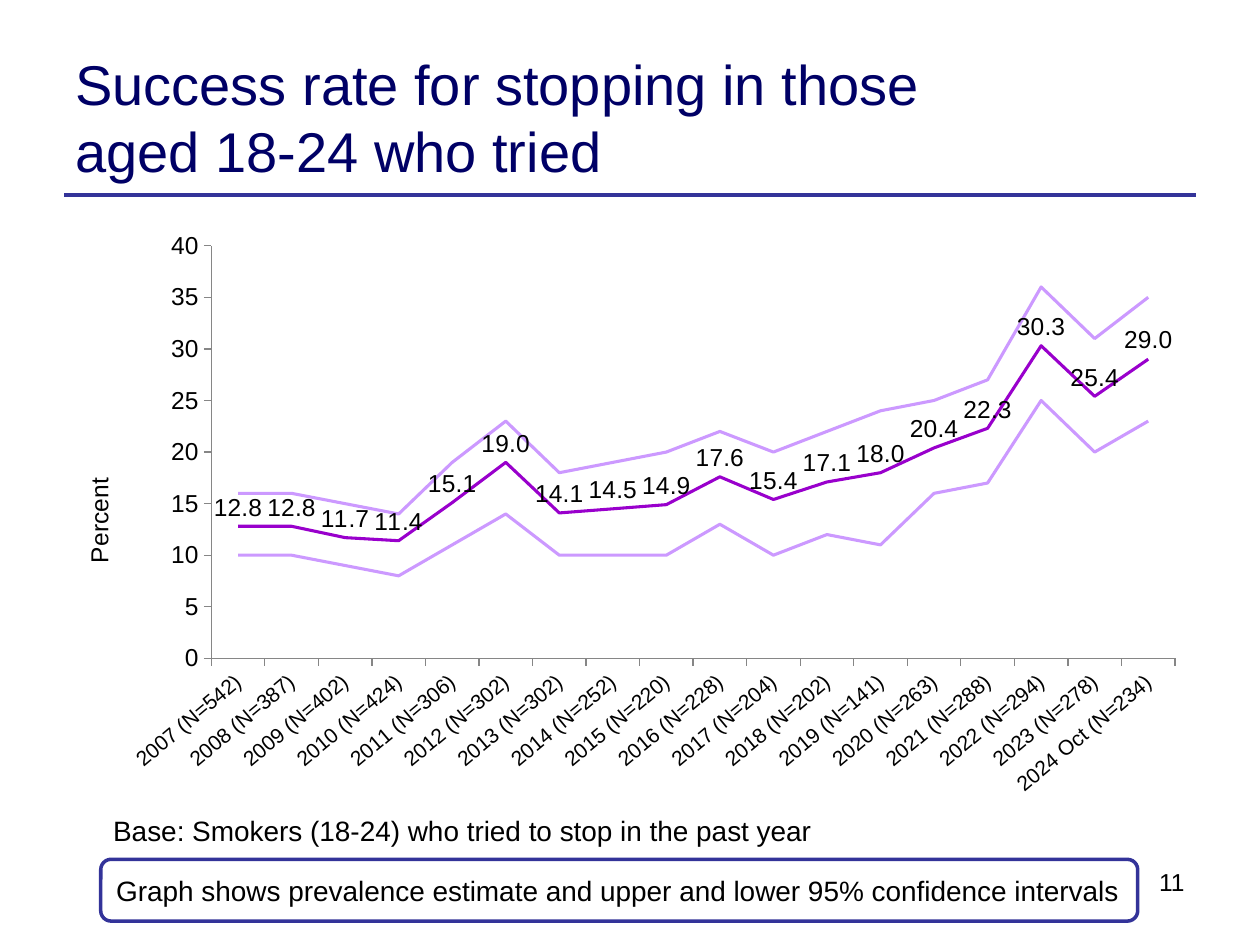
from lxml import etree
from pptx import Presentation
from pptx.chart.data import CategoryChartData
from pptx.dml.color import RGBColor
from pptx.enum.chart import XL_CHART_TYPE, XL_LABEL_POSITION, XL_MARKER_STYLE, XL_TICK_MARK
from pptx.enum.shapes import MSO_CONNECTOR, MSO_SHAPE
from pptx.enum.text import MSO_ANCHOR, PP_ALIGN
from pptx.oxml.ns import qn
from pptx.util import Inches, Pt

LINE_CHART = XL_CHART_TYPE.LINE
ABOVE = XL_LABEL_POSITION.ABOVE
NO_MARKER = XL_MARKER_STYLE.NONE
TICK_OUT, TICK_NONE = XL_TICK_MARK.OUTSIDE, XL_TICK_MARK.NONE
STRAIGHT = MSO_CONNECTOR.STRAIGHT
ROUNDED = MSO_SHAPE.ROUNDED_RECTANGLE
TOP, MIDDLE = MSO_ANCHOR.TOP, MSO_ANCHOR.MIDDLE
LEFT, RIGHT = PP_ALIGN.LEFT, PP_ALIGN.RIGHT

SURVEYS = [
    ("2007 (N=542)", 12.8, 16, 10), ("2008 (N=387)", 12.8, 16, 10),
    ("2009 (N=402)", 11.7, 15, 9), ("2010 (N=424)", 11.4, 14, 8),
    ("2011 (N=306)", 15.1, 19, 11), ("2012 (N=302)", 19, 23, 14),
    ("2013 (N=302)", 14.1, 18, 10), ("2014 (N=252)", 14.5, 19, 10),
    ("2015 (N=220)", 14.9, 20, 10), ("2016 (N=228)", 17.6, 22, 13),
    ("2017 (N=204)", 15.4, 20, 10), ("2018 (N=202)", 17.1, 22, 12),
    ("2019 (N=141)", 18, 24, 11), ("2020 (N=263)", 20.4, 25, 16),
    ("2021 (N=288)", 22.3, 27, 17), ("2022 (N=294)", 30.3, 36, 25),
    ("2023 (N=278)", 25.4, 31, 20), ("2024 Oct (N=234)", 29, 35, 23),
]


def colour(hex_code):
    return RGBColor.from_string(hex_code)


def place(parent, index, **settings):
    for old in parent.findall(qn("c:layout")):
        parent.remove(old)
    layout = etree.Element(qn("c:layout"))
    manual = etree.SubElement(layout, qn("c:manualLayout"))
    for name, value in settings.items():
        etree.SubElement(manual, qn(f"c:{name}")).set("val", str(value))
    parent.insert(index, layout)


class SlideBuilder:
    """Draws styled elements on the current slide."""

    font = "Arial"
    ink, navy, accent, axis_grey = "000000", "000066", "333399", "868686"
    estimate, interval = "9900CC", "CC99FF"

    def __init__(self, slide):
        self.slide = slide

    def style(self, font, size, hex_code):
        font.name, font.size, font.bold = self.font, Pt(size), False
        font.color.rgb = colour(hex_code)

    def fill_frame(self, frame, words, size, hex_code, align=LEFT, anchor=TOP, wrap=True):
        frame.word_wrap, frame.vertical_anchor = wrap, anchor
        paragraph = frame.paragraphs[0]
        paragraph.alignment = align
        run = paragraph.add_run()
        run.text = words
        self.style(run.font, size, hex_code)

    def text(self, box, words, size, hex_code=ink, **layout):
        label = self.slide.shapes.add_textbox(*map(Inches, box))
        self.fill_frame(label.text_frame, words, size, hex_code, **layout)

    def rule(self, *ends):
        rule = self.slide.shapes.add_connector(STRAIGHT, *map(Inches, ends))
        rule.line.color.rgb, rule.line.width = colour(self.accent), Pt(2.25)
        etree.SubElement(rule.element.spPr, qn("a:effectLst"))

    def callout(self, box, words, size):
        callout = self.slide.shapes.add_shape(ROUNDED, *map(Inches, box))
        callout.shadow.inherit = False
        callout.fill.solid()
        callout.fill.fore_color.rgb = colour("FFFFFF")
        callout.line.color.rgb, callout.line.width = colour(self.accent), Pt(2)
        self.fill_frame(callout.text_frame, words, size, self.ink, anchor=MIDDLE)

    def axis(self, axis, size):
        axis.has_major_gridlines = False
        axis.major_tick_mark, axis.minor_tick_mark = TICK_OUT, TICK_NONE
        axis.format.line.color.rgb = colour(self.axis_grey)
        axis.format.line.width = Pt(0.75)
        self.style(axis.tick_labels.font, size, self.ink)

    def line_chart(self, box, surveys):
        categories, *columns = zip(*surveys)
        data = CategoryChartData()
        data.categories = categories
        for number, values in enumerate(columns, 1):
            data.add_series(f"Series {number}", values)
        frame = self.slide.shapes.add_chart(LINE_CHART, *map(Inches, box), data)
        chart = frame.chart
        chart.has_legend = chart.has_title = False
        self.style(chart.font, 18, self.ink)
        plot = chart.plots[0]
        plot.vary_by_categories = False
        for series, hex_code in zip(plot.series, (self.estimate, self.interval, self.interval)):
            series.smooth = False
            series.marker.style = NO_MARKER
            series.format.line.color.rgb = colour(hex_code)
            series.format.line.width = Pt(1.75)

        labels = plot.series[0].data_labels
        labels.show_value, labels.position = True, ABOVE
        labels.number_format, labels.number_format_is_linked = "#,##0.0", False
        self.style(labels.font, 14, self.ink)

        years, percent = chart.category_axis, chart.value_axis
        self.axis(years, 12)
        self.axis(percent, 14)
        percent.minimum_scale, percent.maximum_scale, percent.major_unit = 0, 40, 5
        percent.tick_labels.number_format = "0"
        percent.tick_labels.number_format_is_linked = False
        self.fill_frame(percent.axis_title.text_frame, "Percent", 14, self.ink)

        root = chart.element
        root.xpath(".//c:catAx/c:txPr/a:bodyPr")[0].set("rot", "-2400000")
        root.xpath(".//c:valAx/c:title//a:bodyPr")[0].set("rot", "-5400000")
        place(root.xpath(".//c:valAx/c:title")[0], 1,
              xMode="edge", yMode="edge", x=0.03, y=0.43)
        place(root.xpath(".//c:plotArea")[0], 0, layoutTarget="inner",
              xMode="edge", yMode="edge", x=0.145, y=0.043, w=0.836, h=0.703)


def main():
    deck = Presentation()
    deck.slide_width, deck.slide_height = Inches(10), Inches(7.5)
    page = SlideBuilder(deck.slides.add_slide(deck.slide_layouts[6]))
    page.rule(0.51, 1.55, 9.49, 1.55)
    page.text((0.5, 0.3, 7.89, 1.25), "Success rate for stopping in those aged 18-24 who tried",
              32, page.navy, anchor=MIDDLE)
    page.line_chart((0.35, 1.75, 9.15, 4.66), SURVEYS)
    page.text((6.73, 6.83, 2.77, 0.52), "11", 14, align=RIGHT)
    page.callout((0.8, 6.82, 8.23, 0.49),
                 "Graph shows prevalence estimate and upper and lower 95% confidence intervals", 16)
    page.text((0.8, 6.41, 5.94, 0.37),
              "Base: Smokers (18-24) who tried to stop in the past year", 16, wrap=False)
    deck.save("out.pptx")


if __name__ == "__main__":
    main()
